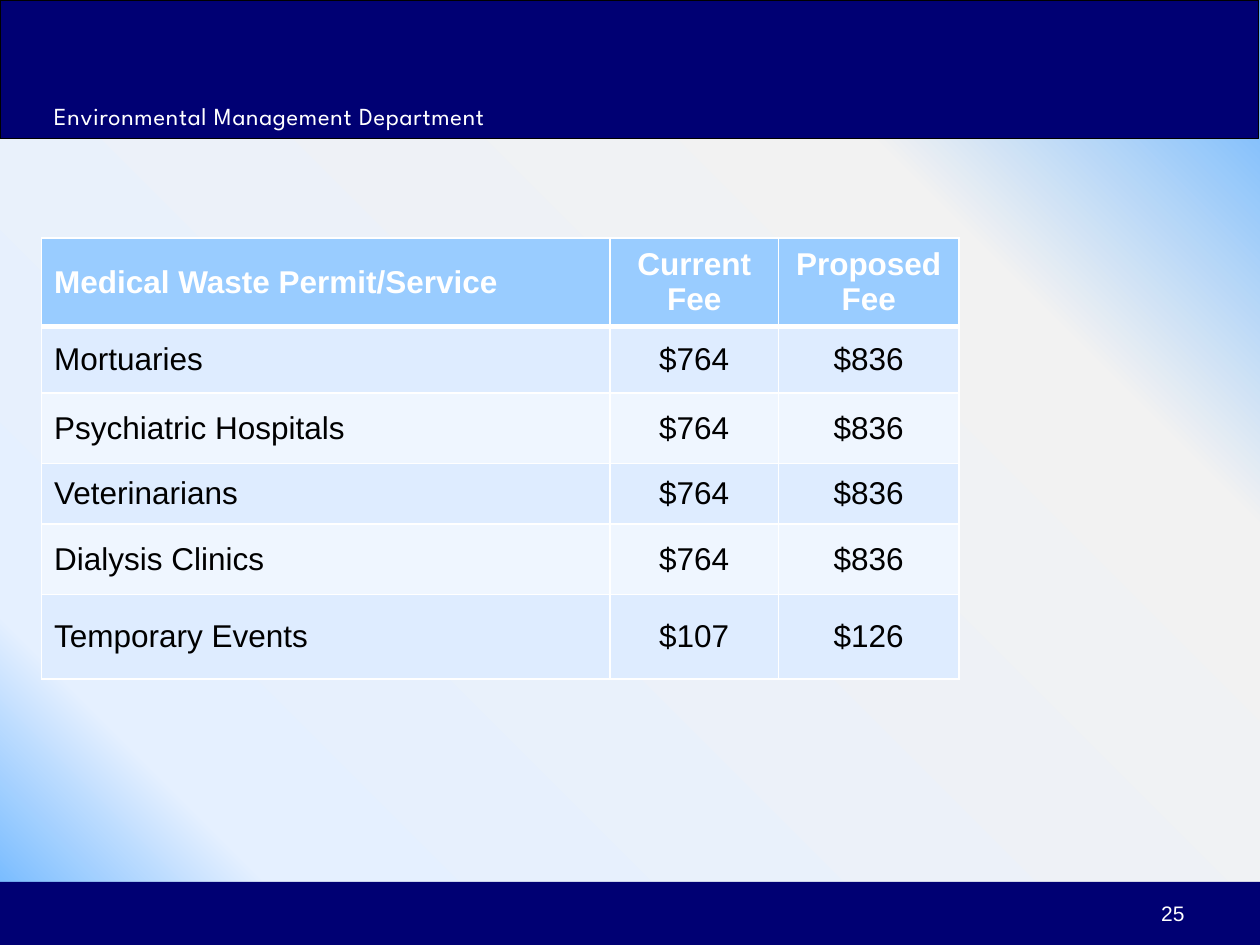
from dataclasses import dataclass

from pptx import Presentation
from pptx.dml.color import RGBColor
from pptx.enum.shapes import MSO_SHAPE
from pptx.enum.text import MSO_ANCHOR, PP_ALIGN
from pptx.oxml import parse_xml
from pptx.oxml.ns import nsdecls
from pptx.util import Inches, Pt


@dataclass(frozen=True)
class Theme:
    navy: str = "000073"
    white: str = "FFFFFF"
    black: str = "000000"
    header: str = "99CCFF"
    bands: tuple = ("DEECFF", "EFF6FF")
    gradient: tuple = ((0, "61B0FF"), (15, "E5F0FF"), (76, "F2F2F2"), (100, "61B0FF"))
    gradient_angle: int = 315
    font: str = "Arial"
    title_font: str = "League Spartan"
    title_size: int = 14
    table_size: int = 18
    number_size: int = 12


THEME = Theme()
COLUMN_WIDTHS = (4.51, 1.34, 1.43)
ROW_HEIGHTS = (0.7, 0.53, 0.56, 0.48, 0.56, 0.67)
FEES = (
    ("Medical Waste Permit/Service", "Current Fee", "Proposed Fee"),
    ("Mortuaries", "$764", "$836"),
    ("Psychiatric Hospitals", "$764", "$836"),
    ("Veterinarians", "$764", "$836"),
    ("Dialysis Clinics", "$764", "$836"),
    ("Temporary Events", "$107", "$126"),
)


def rgb(color):
    return RGBColor.from_string(color)


def set_background(slide):
    stops = "".join(
        f'<a:gs pos="{position * 1000}"><a:srgbClr val="{color}"/></a:gs>'
        for position, color in THEME.gradient
    )
    background = parse_xml(
        f'<p:bg {nsdecls("p", "a")}><p:bgPr><a:gradFill rotWithShape="1">'
        f'<a:gsLst>{stops}</a:gsLst><a:lin ang="{THEME.gradient_angle * 60000}" scaled="0"/>'
        "</a:gradFill><a:effectLst/></p:bgPr></p:bg>"
    )
    slide.element.cSld.insert(0, background)


def add_band(slide, left, top, width, height, outline=None):
    band = slide.shapes.add_shape(
        MSO_SHAPE.RECTANGLE, Inches(left), Inches(top), Inches(width), Inches(height)
    )
    band.shadow.inherit = False
    band.fill.solid()
    band.fill.fore_color.rgb = rgb(THEME.navy)
    if outline:
        band.line.color.rgb = rgb(outline)
        band.line.width = Pt(0.75)
    else:
        band.line.fill.background()


def write_text(text_frame, text, size, color, font=THEME.font, align=PP_ALIGN.LEFT, bold=False):
    text_frame.text = text
    text_frame.word_wrap = True
    paragraph = text_frame.paragraphs[0]
    paragraph.alignment = align
    run = paragraph.runs[0]
    run.font.name = font
    run.font.size = Pt(size)
    run.font.bold = bold
    run.font.color.rgb = rgb(color)
    return run


def add_text(slide, left, top, width, height, *args, **kwargs):
    box = slide.shapes.add_textbox(Inches(left), Inches(top), Inches(width), Inches(height))
    box.text_frame.vertical_anchor = MSO_ANCHOR.MIDDLE
    return write_text(box.text_frame, *args, **kwargs)


def set_borders(cell, bottom_width):
    properties = cell._tc.get_or_add_tcPr()
    widths = {"lnL": 1, "lnR": 1, "lnT": 1, "lnB": bottom_width}
    for index, (side, width) in enumerate(widths.items()):
        border = parse_xml(
            f'<a:{side} {nsdecls("a")} w="{Pt(width)}"><a:solidFill>'
            f'<a:srgbClr val="{THEME.white}"/></a:solidFill></a:{side}>'
        )
        properties.insert(index, border)


def add_fee_table(slide, left, top):
    table = slide.shapes.add_table(
        len(FEES), len(COLUMN_WIDTHS), Inches(left), Inches(top),
        Inches(sum(COLUMN_WIDTHS)), Inches(sum(ROW_HEIGHTS)),
    ).table
    for column, width in zip(table.columns, COLUMN_WIDTHS):
        column.width = Inches(width)
    for row, height in zip(table.rows, ROW_HEIGHTS):
        row.height = Inches(height)
    for row_index, values in enumerate(FEES):
        is_header = row_index == 0
        fill = THEME.header if is_header else THEME.bands[(row_index - 1) % 2]
        color = THEME.white if is_header else THEME.black
        for column_index, value in enumerate(values):
            cell = table.cell(row_index, column_index)
            cell.vertical_anchor = MSO_ANCHOR.MIDDLE
            cell.fill.solid()
            cell.fill.fore_color.rgb = rgb(fill)
            align = PP_ALIGN.CENTER if column_index else PP_ALIGN.LEFT
            write_text(cell.text_frame, value, THEME.table_size, color, align=align, bold=is_header)
            set_borders(cell, 3 if is_header else 1)


def main():
    presentation = Presentation()
    presentation.slide_width = Inches(10)
    presentation.slide_height = Inches(7.5)
    slide = presentation.slides.add_slide(presentation.slide_layouts[6])
    set_background(slide)
    add_band(slide, 0, 7, 10, 0.5)
    add_text(slide, 7.17, 7.08, 2.33, 0.34, "25", THEME.number_size, THEME.white,
             align=PP_ALIGN.RIGHT)
    add_band(slide, 0, 0, 9.99, 1.1, THEME.black)
    title = add_text(slide, 0.33, 0.71, 4.61, 0.42, "Environmental Management Department",
                     THEME.title_size, THEME.white, THEME.title_font)
    title.font._element.set("spc", "40")
    add_fee_table(slide, 0.33, 1.89)
    presentation.save("out.pptx")


if __name__ == "__main__":
    main()
